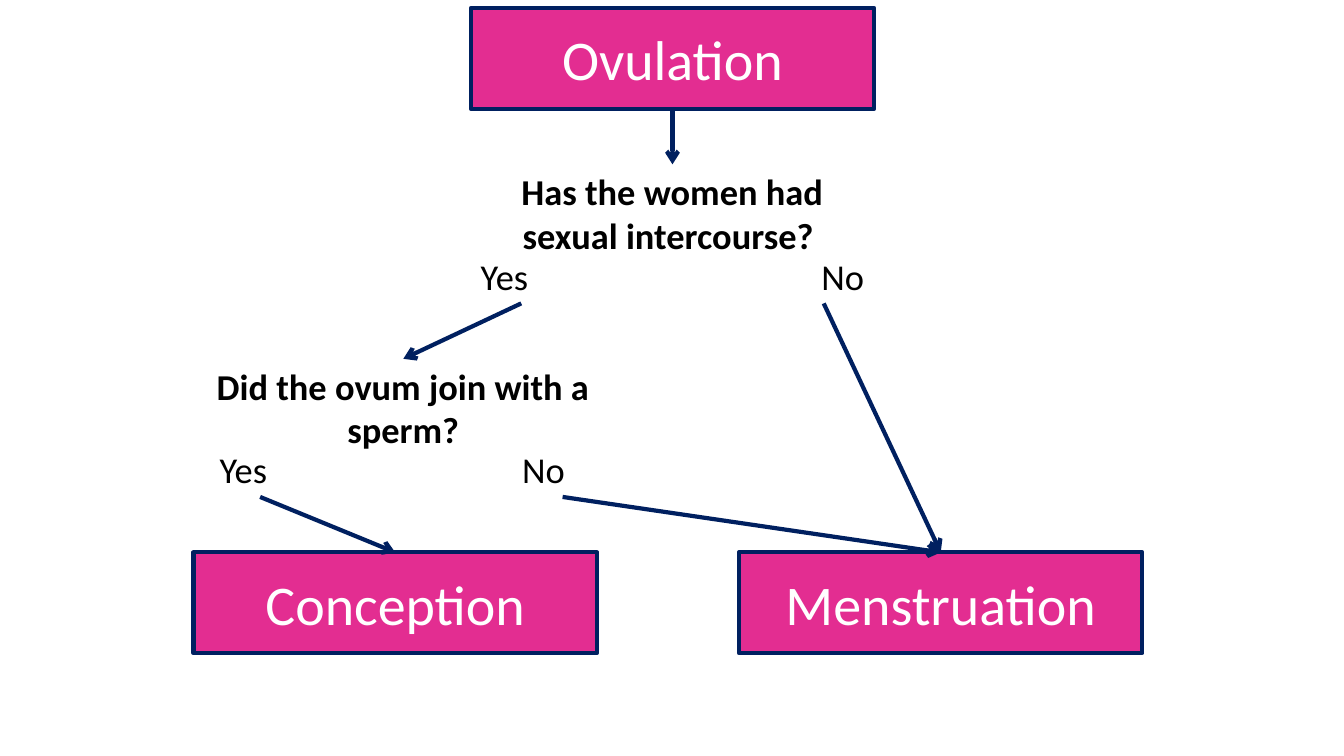
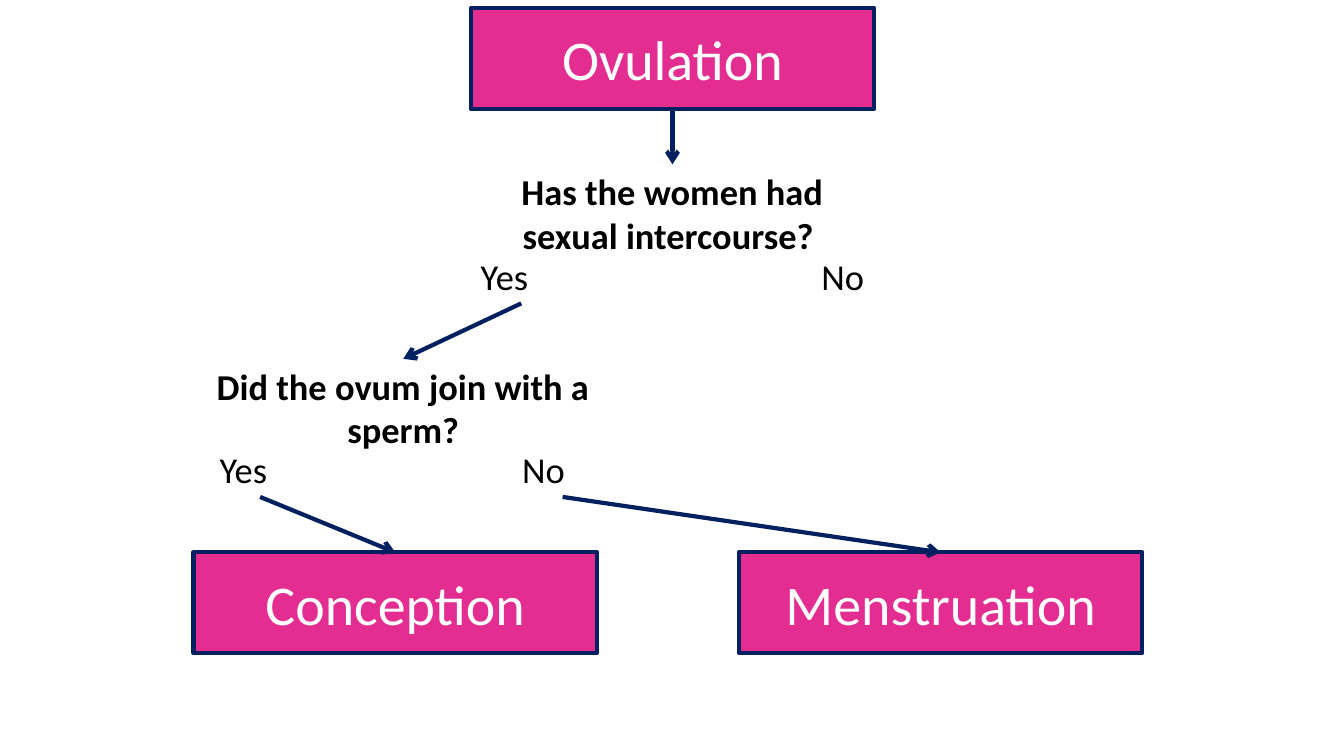
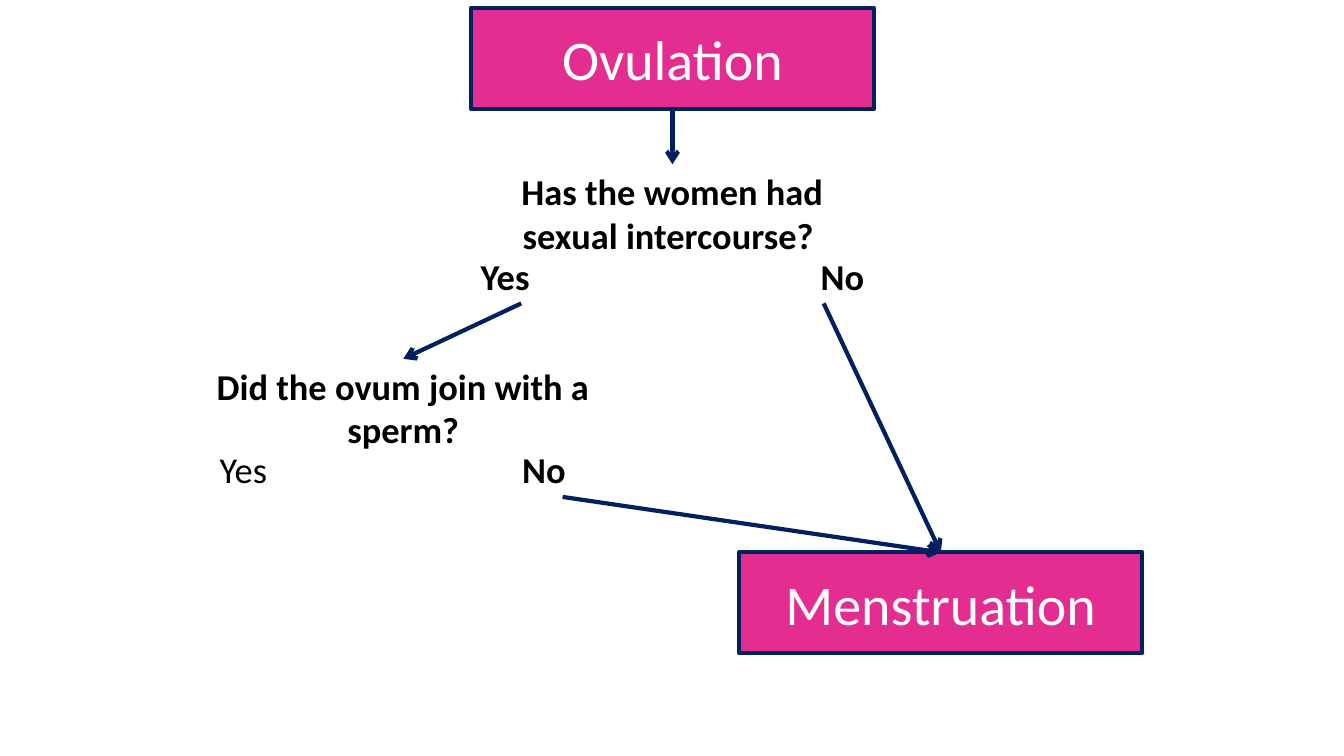
from dataclasses import dataclass
from typing import Any

from pptx import Presentation
from pptx.dml.color import RGBColor
from pptx.enum.shapes import MSO_CONNECTOR, MSO_SHAPE
from pptx.enum.text import MSO_ANCHOR, MSO_AUTO_SIZE, PP_ALIGN
from pptx.oxml.ns import qn
from pptx.util import Inches, Pt
from lxml import etree

RECT = MSO_SHAPE.RECTANGLE
LINE = MSO_CONNECTOR.STRAIGHT
MIDDLE = MSO_ANCHOR.MIDDLE
GROW = MSO_AUTO_SIZE.SHAPE_TO_FIT_TEXT
LEFT, CENTER, RIGHT = PP_ALIGN.LEFT, PP_ALIGN.CENTER, PP_ALIGN.RIGHT
TOP_SITE, BOTTOM_SITE = 0, 2


@dataclass(frozen=True)
class Theme:
    font: str = "Calibri"
    pink: RGBColor = RGBColor(0xE3, 0x2D, 0x91)
    navy: RGBColor = RGBColor(0x00, 0x20, 0x60)
    black: RGBColor = RGBColor(0x00, 0x00, 0x00)
    white: RGBColor = RGBColor(0xFF, 0xFF, 0xFF)
    box_size: Pt = Pt(40)
    text_size: Pt = Pt(26)
    line: Pt = Pt(3)


@dataclass(frozen=True)
class Box:
    text: str
    left: float
    top: float
    width: float = 4
    height: float = 1


@dataclass(frozen=True)
class Label:
    text: str
    left: float
    top: float
    width: float = 1
    height: float = 0.54
    align: PP_ALIGN = LEFT
    bold: bool = False


@dataclass(frozen=True)
class Step:
    """What one slide leaves out of the chart, and which answers it stresses."""
    hidden: tuple[str, ...] = ()
    cut: tuple[tuple[str, str], ...] = ()
    bold: tuple[str, ...] = ()


THEME = Theme()

# Parts of the chart, by key
BOXES = {
    "start": Box("Ovulation", 4.67, 0.08),
    "period": Box("Menstruation", 7.33, 5.48),
    "baby": Box("Conception", 1.92, 5.48),
}
LABELS = {
    "sex": Label("Has the women had sexual intercourse? ", 4.67, 1.63, 4, 0.98, CENTER, True),
    "sex yes": Label("Yes", 4.67, 2.47),
    "sex no": Label("No", 7.67, 2.47, align=RIGHT),
    "join": Label("Did the ovum join with a sperm?", 2, 3.56, 4, 0.98, CENTER, True),
    "join yes": Label("Yes", 2.08, 4.39),
    "join no": Label("No", 5.08, 4.39),
}
# Each arrow runs from the bottom of one part to the top of the next
ARROWS = (
    ("start", "sex"),
    ("sex yes", "join"),
    ("join yes", "baby"),
    ("sex no", "period"),
    ("join no", "period"),
)
STEPS = (
    Step(),
    Step(cut=(("sex no", "period"),)),
    Step(hidden=("baby",), bold=("sex yes", "sex no", "join no")),
)


def write(shape: Any, text: str, size: Pt, color: RGBColor, align: PP_ALIGN, bold: bool) -> None:
    frame = shape.text_frame
    frame.word_wrap = True
    para = frame.paragraphs[0]
    para.text = text
    para.alignment = align
    para.font.name = THEME.font
    para.font.size = size
    para.font.bold = bold
    para.font.color.rgb = color


def add_box(slide: Any, box: Box) -> Any:
    shape = slide.shapes.add_shape(
        RECT, Inches(box.left), Inches(box.top), Inches(box.width), Inches(box.height))
    shape.shadow.inherit = False
    shape.fill.solid()
    shape.fill.fore_color.rgb = THEME.pink
    shape.line.color.rgb = THEME.navy
    shape.line.width = THEME.line
    shape.text_frame.vertical_anchor = MIDDLE
    write(shape, box.text, THEME.box_size, THEME.white, CENTER, False)
    return shape


def add_label(slide: Any, label: Label, bold: bool) -> Any:
    shape = slide.shapes.add_textbox(
        Inches(label.left), Inches(label.top), Inches(label.width), Inches(label.height))
    write(shape, label.text, THEME.text_size, THEME.black, label.align, bold)
    shape.text_frame.auto_size = GROW
    return shape


def add_arrow(slide: Any, start: Any, end: Any) -> None:
    arrow = slide.shapes.add_connector(LINE, 0, 0, 0, 0)
    arrow.begin_connect(start, BOTTOM_SITE)
    arrow.end_connect(end, TOP_SITE)
    arrow.line.color.rgb = THEME.navy
    arrow.line.width = THEME.line
    # Arrowhead, and no shadow
    etree.SubElement(arrow.line._get_or_add_ln(), qn("a:tailEnd"), type="arrow")
    etree.SubElement(arrow._element.spPr, qn("a:effectLst"))


def draw(slide: Any, step: Step) -> None:
    parts = {key: add_box(slide, box)
             for key, box in BOXES.items() if key not in step.hidden}
    for key, label in LABELS.items():
        parts[key] = add_label(slide, label, label.bold or key in step.bold)
    for pair in ARROWS:
        start, end = pair
        if pair not in step.cut and start in parts and end in parts:
            add_arrow(slide, parts[start], parts[end])


def main() -> None:
    deck = Presentation()
    deck.slide_width, deck.slide_height = Inches(13.33), Inches(7.5)
    blank = deck.slide_layouts[6]
    for step in STEPS:
        draw(deck.slides.add_slide(blank), step)
    deck.save("out.pptx")


if __name__ == "__main__":
    main()
